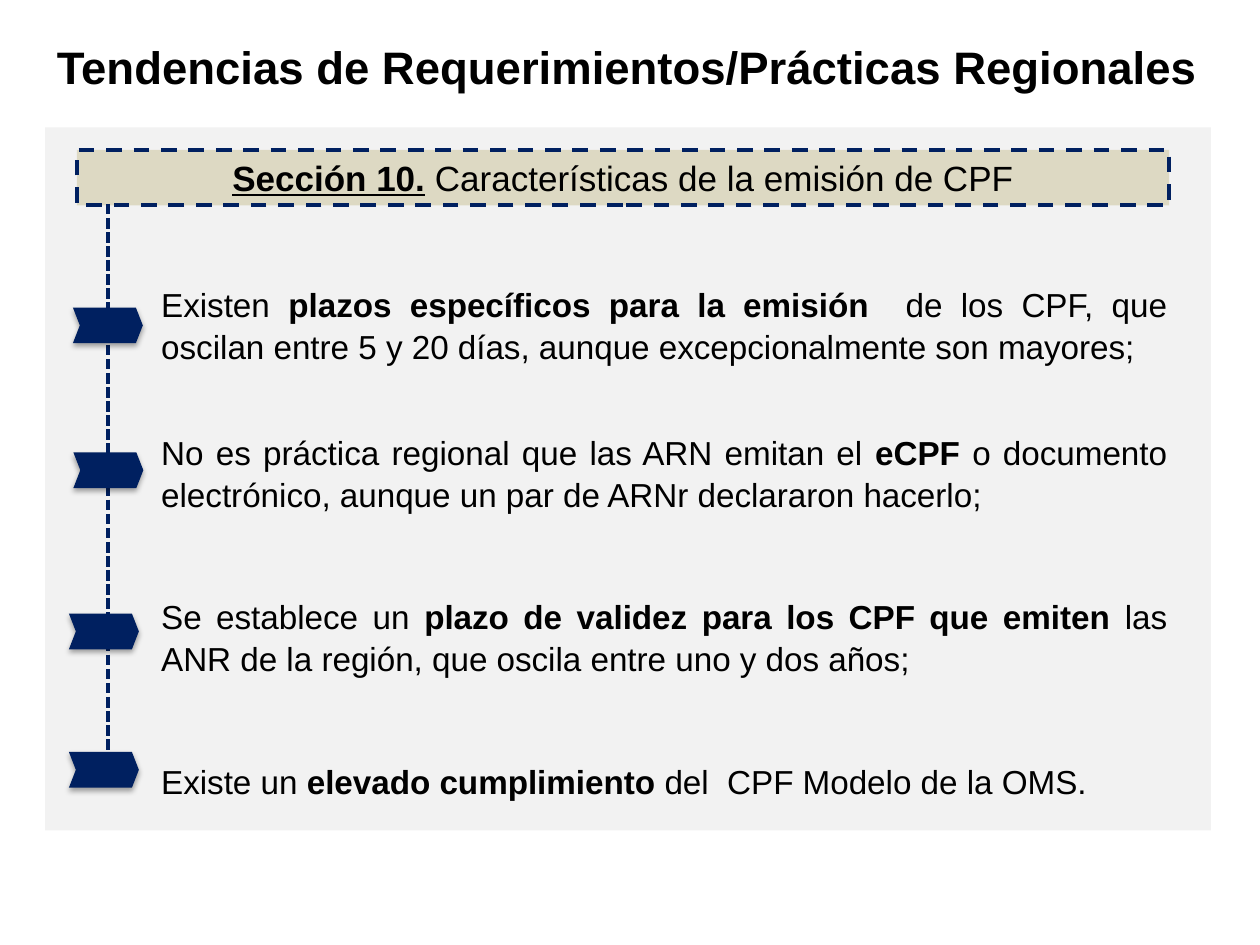
from lxml.etree import SubElement
from pptx import Presentation
from pptx.dml.color import RGBColor
from pptx.enum.dml import MSO_LINE
from pptx.enum.shapes import MSO_CONNECTOR, MSO_SHAPE
from pptx.enum.text import MSO_ANCHOR, PP_ALIGN
from pptx.oxml import parse_xml
from pptx.oxml.ns import nsdecls, qn
from pptx.util import Cm, Pt

NAVY = RGBColor(0x00, 0x20, 0x60)
SAND = RGBColor(0xDD, 0xD9, 0xC3)
LIGHT_GREY = RGBColor(0xF2, 0xF2, 0xF2)
BLACK = RGBColor(0, 0, 0)

# Runs are (text, style); the style may hold "b" (bold) and "u" (underline).
TITLE = [("Tendencias de Requerimientos/Prácticas Regionales", "b")]
SECTION = [("Sección 10.", "bu"), (" ", "b"),
           ("Características de la emisión de CPF", "")]

# Each finding: space before (pt), marker left and top (cm), runs
FINDINGS = [
    (0, 1.47, 6.2, [
        ("Existen ", ""),
        ("plazos específicos para la emisión  ", "b"),
        ("de los CPF, que oscilan entre 5 y 20 días, aunque "
         "excepcionalmente son mayores;", "")]),
    (37, 1.48, 9.12, [
        ("No es práctica regional que las ARN emitan el ", ""),
        ("eCPF", "b"),
        (" o documento electrónico, aunque un par de ARNr "
         "declararon hacerlo;", "")]),
    (46, 1.39, 12.37, [
        ("Se establece un ", ""),
        ("plazo de validez para los CPF que emiten ", "b"),
        ("las ANR de la región, que oscila entre uno y dos años;", "")]),
    (46, 1.39, 15.16, [
        ("Existe un ", ""),
        ("elevado cumplimiento ", "b"),
        ("del  CPF Modelo de la OMS.", "")]),
]

MARKER_WIDTH, MARKER_HEIGHT, NOTCH = 1.41, 0.72, 0.14
TIMELINE_X, TIMELINE_TOP, TIMELINE_BOTTOM = 2.18, 4.11, 15.67

MARKER_SHADOW = (
    f'<a:effectLst {nsdecls("a")}>'
    '<a:outerShdw blurRad="39370" dist="22860" dir="5400000" rotWithShape="0">'
    '<a:srgbClr val="000000"><a:alpha val="35000"/></a:srgbClr>'
    '</a:outerShdw></a:effectLst>')


def add_runs(paragraph, runs, size, alignment):
    paragraph.alignment = alignment
    for text, style in runs:
        run = paragraph.add_run()
        run.text = text
        run.font.name = "Arial"
        run.font.size = Pt(size)
        run.font.color.rgb = BLACK
        run.font.bold = "b" in style
        run.font.underline = "u" in style


def add_panel(slide, left, top, width, height, color):
    panel = slide.shapes.add_shape(
        MSO_SHAPE.RECTANGLE, Cm(left), Cm(top), Cm(width), Cm(height))
    panel.shadow.inherit = False
    panel.fill.solid()
    panel.fill.fore_color.rgb = color
    panel.line.fill.background()
    return panel


def add_text_frame(slide, left, top, width, height):
    frame = slide.shapes.add_textbox(
        Cm(left), Cm(top), Cm(width), Cm(height)).text_frame
    frame.word_wrap = True
    return frame


def add_marker(slide, left, top):
    """Add a shadowed ribbon arrow pointing right."""
    right, bottom, middle = (
        left + MARKER_WIDTH, top + MARKER_HEIGHT, top + MARKER_HEIGHT / 2)
    outline = [(right, middle), (right - NOTCH, top), (left, top),
               (left + NOTCH, middle), (left, bottom), (right - NOTCH, bottom)]
    start, *others = [(Cm(x), Cm(y)) for x, y in outline]
    builder = slide.shapes.build_freeform(*start)
    builder.add_line_segments(others, close=True)
    marker = builder.convert_to_shape()
    marker.fill.solid()
    marker.fill.fore_color.rgb = NAVY
    marker.line.fill.background()
    marker._element.spPr.append(parse_xml(MARKER_SHADOW))


def main():
    presentation = Presentation()
    presentation.slide_width, presentation.slide_height = Cm(25.4), Cm(19.05)
    slide = presentation.slides.add_slide(presentation.slide_layouts[6])

    add_panel(slide, 0.91, 2.57, 23.5, 14.17, LIGHT_GREY)

    section = add_panel(slide, 1.55, 3.02, 22.02, 1.12, SAND)
    section.line.color.rgb = NAVY
    section.line.width = Pt(2.25)
    section.line.dash_style = MSO_LINE.DASH
    section.text_frame.vertical_anchor = MSO_ANCHOR.MIDDLE
    add_runs(section.text_frame.paragraphs[0], SECTION, 20, PP_ALIGN.CENTER)

    findings = add_text_frame(slide, 3, 5.56, 20.78, 10.52)
    for index, (gap, _, _, runs) in enumerate(FINDINGS):
        paragraph = (findings.add_paragraph() if index
                     else findings.paragraphs[0])
        paragraph.line_spacing = 1.05
        paragraph.space_before = Pt(gap)
        add_runs(paragraph, runs, 19, PP_ALIGN.JUSTIFY)

    title = add_text_frame(slide, -0.05, 0.76, 25.4, 1.14)
    title.vertical_anchor = MSO_ANCHOR.MIDDLE
    add_runs(title.paragraphs[0], TITLE, 26, PP_ALIGN.CENTER)

    timeline = slide.shapes.add_connector(
        MSO_CONNECTOR.STRAIGHT, Cm(TIMELINE_X), Cm(TIMELINE_TOP),
        Cm(TIMELINE_X), Cm(TIMELINE_BOTTOM))
    timeline.line.color.rgb = NAVY
    timeline.line.width = Pt(2)
    timeline.line.dash_style = MSO_LINE.SQUARE_DOT
    SubElement(timeline._element.spPr, qn("a:effectLst"))

    for _, left, top, _ in FINDINGS:
        add_marker(slide, left, top)

    presentation.save("out.pptx")


if __name__ == "__main__":
    main()
